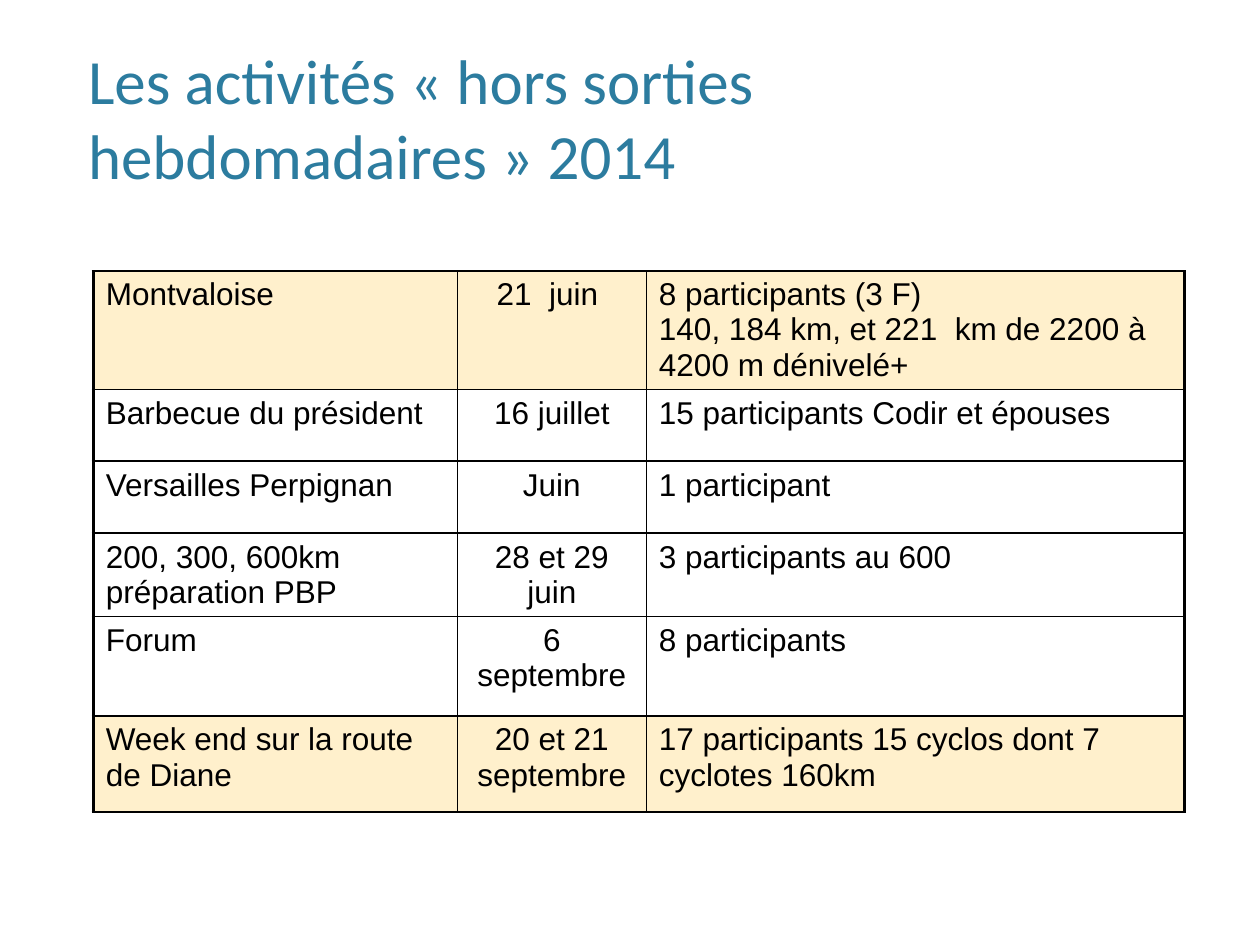
from lxml import etree
from pptx import Presentation
from pptx.dml.color import RGBColor
from pptx.enum.text import MSO_ANCHOR, MSO_AUTO_SIZE, PP_ALIGN
from pptx.oxml.ns import qn
from pptx.util import Cm, Pt

LEFT, CENTER = PP_ALIGN.LEFT, PP_ALIGN.CENTER
BOTTOM = MSO_ANCHOR.BOTTOM
NO_FIT = MSO_AUTO_SIZE.NONE

TITLE = "Les activités «\u00a0hors sorties hebdomadaires\u00a0» 2014"
ACTIVITIES = [
    ("Montvaloise", "21  juin ",
     "8 participants (3 F)\n140, 184 km, et 221  km de 2200 à 4200 m dénivelé+"),
    ("Barbecue du président", "16 juillet", "15 participants Codir et épouses"),
    ("Versailles Perpignan", "Juin", "1 participant"),
    ("200, 300, 600km préparation PBP", "28 et 29 juin", "3 participants au 600"),
    ("Forum", "6 septembre", "8 participants"),
    ("Week end sur la route de Diane", "20 et 21 septembre",
     "17 participants 15 cyclos dont 7 cyclotes 160km"),
]
HIGHLIGHTED = {0, 5}
ALIGNMENTS = [LEFT, CENTER, LEFT]
COL_WIDTHS = [7.34, 3.81, 10.85]
ROW_HEIGHTS = [1.93, 1.45, 1.45, 1.57, 2.01, 1.93]
TITLE_BOX = {"left": 1.52, "top": 0.3, "width": 22.35, "height": 3.71}
TABLE_LEFT, TABLE_TOP = 1.88, 5.46

THEME = {
    "title": {"name": "Calibri", "size": Pt(36), "color": "2C7C9F"},
    "body": {"name": "Arial", "size": Pt(18), "color": "000000"},
    "highlight": "FFF0CC",
    "border": "000000",
    "thin": 1,
    "thick": 2.25,
}


def write(p, text, style, align):
    p.alignment = align
    r = p.add_run()
    r.text = text
    for key in ("name", "size"):
        setattr(r.font, key, style[key])
    r.font.color.rgb = RGBColor.from_string(style["color"])


def add_borders(cell, widths):
    props = cell._tc.get_or_add_tcPr()
    for i, (side, width) in enumerate(widths.items()):
        line = etree.Element(qn(f"a:ln{side}"), w=str(Pt(width)))
        fill = etree.SubElement(line, qn("a:solidFill"))
        etree.SubElement(fill, qn("a:srgbClr"), val=THEME["border"])
        props.insert(i, line)


def add_title(s):
    title = s.shapes.title
    for key, value in TITLE_BOX.items():
        setattr(title, key, Cm(value))
    tf = title.text_frame
    for key, value in {"vertical_anchor": BOTTOM, "word_wrap": True,
                       "auto_size": NO_FIT}.items():
        setattr(tf, key, value)
    write(tf.paragraphs[0], TITLE, THEME["title"], LEFT)


def fill_cell(cell, text, row, col):
    if row in HIGHLIGHTED:
        cell.fill.solid()
        cell.fill.fore_color.rgb = RGBColor.from_string(THEME["highlight"])
    else:
        cell.fill.background()
    thin, thick = THEME["thin"], THEME["thick"]
    add_borders(cell, {
        "L": thick if col == 0 else thin,
        "R": thick if col == len(COL_WIDTHS) - 1 else thin,
        "T": thin,
        "B": thin,
    })
    tf = cell.text_frame
    for i, line in enumerate(text.split("\n")):
        p = tf.add_paragraph() if i else tf.paragraphs[0]
        write(p, line, THEME["body"], ALIGNMENTS[col])


def add_activities(s):
    table = s.shapes.add_table(
        len(ROW_HEIGHTS), len(COL_WIDTHS), Cm(TABLE_LEFT), Cm(TABLE_TOP),
        Cm(sum(COL_WIDTHS)), Cm(sum(ROW_HEIGHTS))).table
    table.first_row = table.horz_banding = False
    for column, width in zip(table.columns, COL_WIDTHS):
        column.width = Cm(width)
    for row, (activity, height) in enumerate(zip(ACTIVITIES, ROW_HEIGHTS)):
        table.rows[row].height = Cm(height)
        for col, text in enumerate(activity):
            fill_cell(table.cell(row, col), text, row, col)


def main():
    prs = Presentation()
    prs.slide_width, prs.slide_height = Cm(25.4), Cm(19.05)
    s = prs.slides.add_slide(prs.slide_layouts.get_by_name("Title Only"))
    add_title(s)
    add_activities(s)
    prs.save("out.pptx")


if __name__ == "__main__":
    main()
